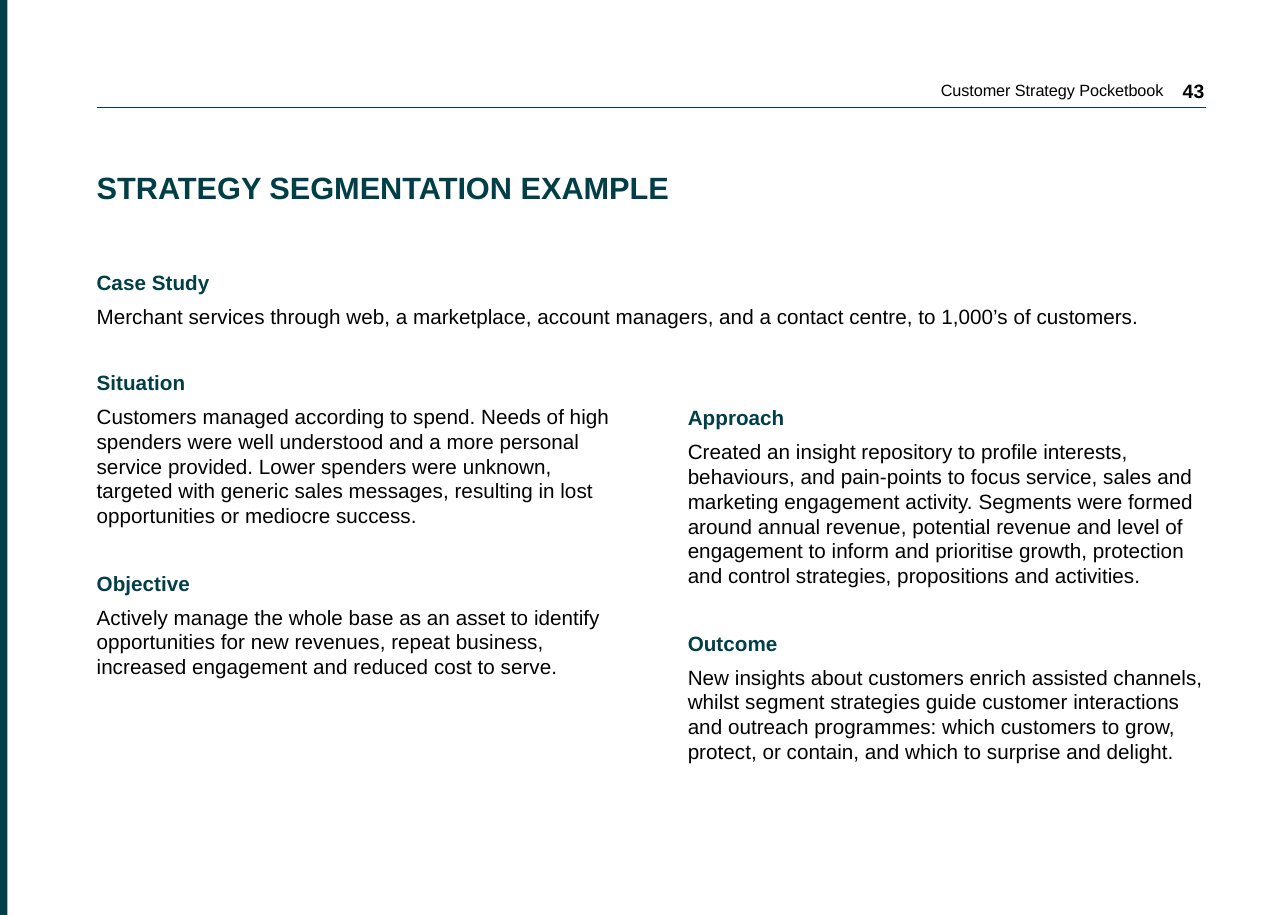
from pptx import Presentation
from pptx.dml.color import RGBColor
from pptx.enum.shapes import MSO_CONNECTOR as Connector, MSO_SHAPE as Shape
from pptx.enum.text import MSO_ANCHOR as Anchor, MSO_AUTO_SIZE as AutoSize, PP_ALIGN as Align
from pptx.oxml.ns import qn
from pptx.util import Inches, Pt
from lxml.etree import SubElement

MM_PER_INCH = 25.4
WIDTH, HEIGHT = 176 / MM_PER_INCH, 125 / MM_PER_INCH
MARGIN, CONTENT_WIDTH, GUTTER = 0.52, 5.97, 0.39
COLUMN_WIDTH = (CONTENT_WIDTH - GUTTER) / 2

CASE_STUDY = [
    ("Case Study", "Merchant services through web, a marketplace, account managers, "
     "and a contact centre, to 1,000’s of customers."),
]
LEFT_COLUMN = [
    ("Situation", "Customers managed according to spend. Needs of high spenders were well "
     "understood and a more personal service provided. Lower spenders were unknown, targeted "
     "with generic sales messages, resulting in lost opportunities or mediocre success."),
    ("Objective", "Actively manage the whole base as an asset to identify opportunities for "
     "new revenues, repeat business, increased engagement and reduced cost to serve."),
]
RIGHT_COLUMN = [
    ("Approach", "Created an insight repository to profile interests, behaviours, and "
     "pain-points to focus service, sales and marketing engagement activity. Segments were "
     "formed around annual revenue, potential revenue and level of engagement to inform and "
     "prioritise growth, protection and control strategies, propositions and activities."),
    ("Outcome", "New insights about customers enrich assisted channels, whilst segment "
     "strategies guide customer interactions and outreach programmes: which customers to grow, "
     "protect, or contain, and which to surprise and delight."),
]


def colour(value):
    return RGBColor.from_string(value)


class PocketbookPage:
    """Holds the style and the current slide, and draws each kind of element."""

    font_name = "Arial"
    accent = "003F48"
    ink = "000000"

    def __init__(self, deck):
        self.page = deck.slides.add_slide(deck.slide_layouts[5])

    def format_text(self, para, size, hex_colour, bold=False):
        for span in para.runs:
            span.font.name = self.font_name
            span.font.size = Pt(size)
            span.font.bold = bold
            span.font.color.rgb = colour(hex_colour)

    def set_frame(self, box, horizontal, vertical, anchor):
        frame = box.text_frame
        frame.word_wrap = True
        frame.auto_size = AutoSize.NONE
        frame.vertical_anchor = anchor
        frame.margin_left = frame.margin_right = Inches(horizontal)
        frame.margin_top = frame.margin_bottom = Inches(vertical)
        return frame

    def title(self, text, left, top, width, height):
        box = self.page.shapes.title
        box.left, box.top = Inches(left), Inches(top)
        box.width, box.height = Inches(width), Inches(height)
        frame = self.set_frame(box, 0, 0.03, Anchor.MIDDLE)
        frame.text = text
        para = frame.paragraphs[0]
        para.alignment = Align.LEFT
        para.line_spacing = 0.9
        self.format_text(para, 11.9, self.accent, True)

    def text_box(self, left, top, width, height, horizontal, vertical, anchor):
        box = self.page.shapes.add_textbox(
            Inches(left), Inches(top), Inches(width), Inches(height))
        return self.set_frame(box, horizontal, vertical, anchor)

    def label(self, text, left, top, width, height, size, margins, bold=False):
        frame = self.text_box(left, top, width, height, *margins, Anchor.MIDDLE)
        frame.text = text
        para = frame.paragraphs[0]
        para.alignment = Align.RIGHT
        self.format_text(para, size, self.ink, bold)

    def sections(self, entries, left, top, width, height, alignment=Align.LEFT):
        frame = self.text_box(left, top, width, height, 0, 0.05, Anchor.TOP)
        frame.text = "\n".join(text for entry in entries for text in entry)
        for index, para in enumerate(frame.paragraphs):
            is_heading = index % 2 == 0
            para.alignment = alignment
            para.space_after = Pt(3.6)
            if is_heading and index:
                para.space_before = Pt(13)
            self.format_text(para, 8, self.accent if is_heading else self.ink, is_heading)

    def rule(self, left, right, top):
        line = self.page.shapes.add_connector(
            Connector.STRAIGHT, Inches(left), Inches(top), Inches(right), Inches(top))
        line.line.color.rgb = colour(self.accent)
        line.line.width = Pt(0.5)
        SubElement(line._element.spPr, qn("a:effectLst"))

    def bar(self, left, top, width, height):
        strip = self.page.shapes.add_shape(
            Shape.RECTANGLE, Inches(left), Inches(top), Inches(width), Inches(height))
        strip.shadow.inherit = False
        strip.fill.solid()
        strip.fill.fore_color.rgb = colour(self.accent)
        strip.line.fill.background()


def main():
    deck = Presentation()
    deck.slide_width, deck.slide_height = Inches(WIDTH), Inches(HEIGHT)
    page = PocketbookPage(deck)
    page.sections(CASE_STUDY, MARGIN, 1.4, CONTENT_WIDTH, 0.48, Align.JUSTIFY)
    page.sections(LEFT_COLUMN, MARGIN, 1.94, COLUMN_WIDTH, 1.78)
    page.sections(RIGHT_COLUMN, MARGIN + COLUMN_WIDTH + GUTTER, 2.13, COLUMN_WIDTH, 2.05)
    page.title("STRATEGY SEGMENTATION EXAMPLE", MARGIN, 0.87, 4.4, 0.3)
    page.label("Customer Strategy Pocketbook", 3.63, 0.38, 2.73, 0.21, 6.3, (0.1, 0.05))
    page.label("43", 6.21, 0.37, 0.33, 0.24, 7.5, (0.06, 0.03), bold=True)
    page.rule(MARGIN, MARGIN + CONTENT_WIDTH, 0.58)
    page.bar(0, 0, 0.04, HEIGHT)
    deck.save("out.pptx")


if __name__ == "__main__":
    main()
